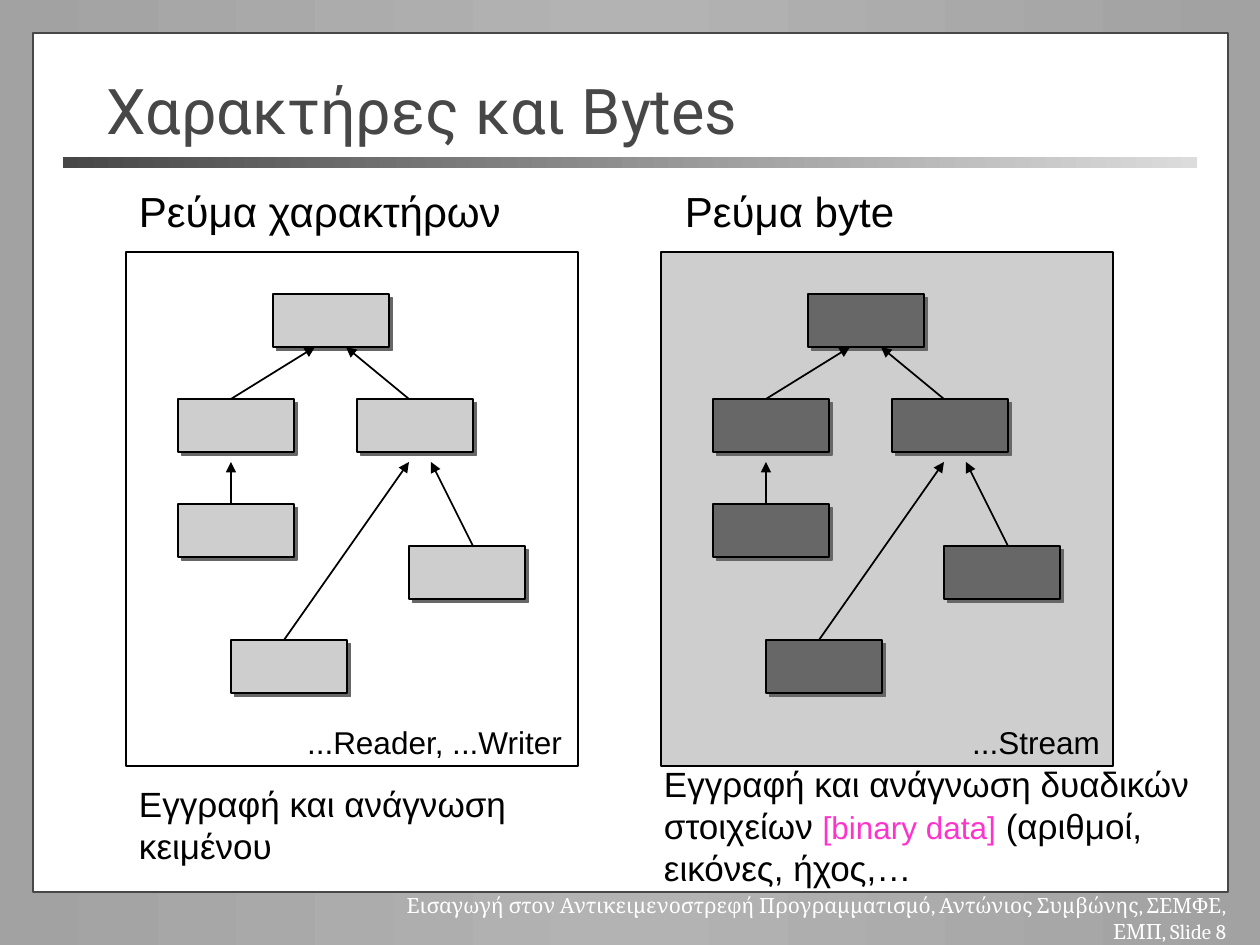
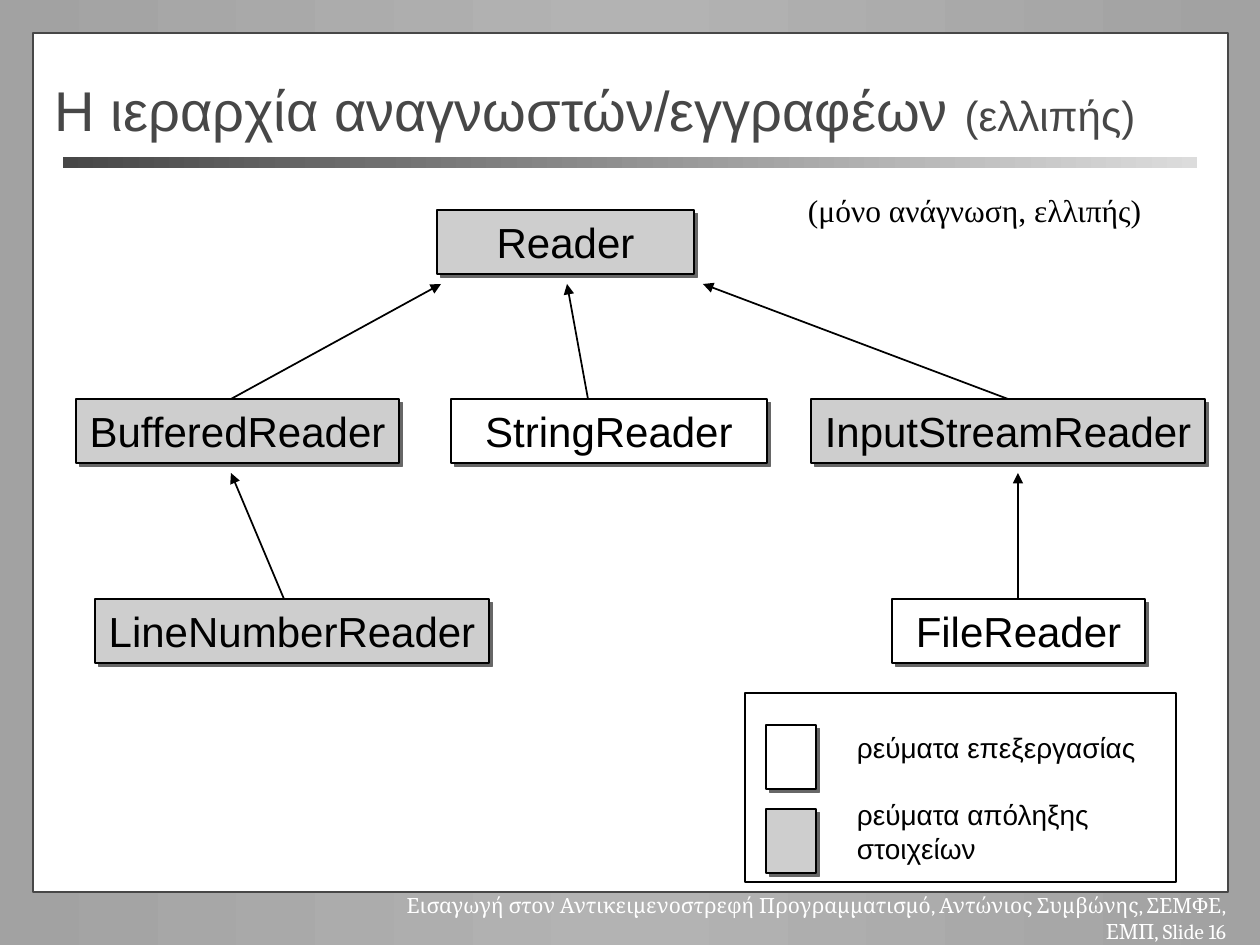
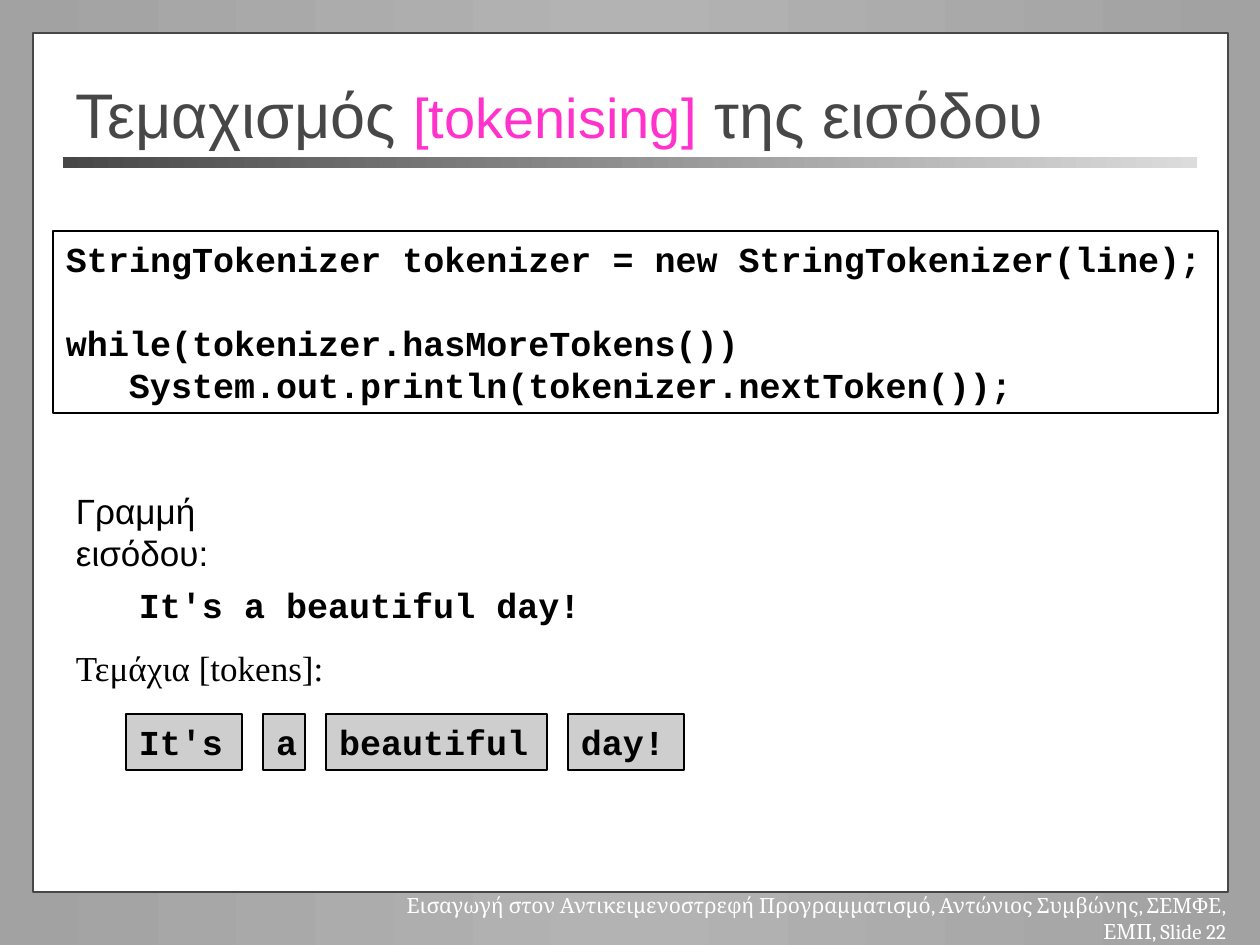
from copy import deepcopy

from lxml.etree import SubElement
from pptx import Presentation
from pptx.dml.color import RGBColor
from pptx.enum.shapes import MSO_CONNECTOR as LINK, MSO_SHAPE as KIND
from pptx.enum.text import MSO_ANCHOR as ANCHOR, PP_ALIGN as ALIGN
from pptx.oxml.ns import qn
from pptx.util import Pt

SCALE = 914400 / 126
PAD = 13
COLORS = {
    "ink": "000000", "paper": "FFFFFF", "slate": "474747", "gray": "CECECE",
    "dark": "676767", "pink": "FF33CC", "edge": "A2A2A2", "mid": "B3B3B3",
    "pale": "DCDCDC",
}
FOOTER = ("Εισαγωγή στον Αντικειμενοστρεφή Προγραμματισμό, "
          "Αντώνιος Συμβώνης, ΣΕΜΦΕ, ΕΜΠ, Slide {}")

NODE = (116, 53)
NODES = [(147, 42), (231, 147), (52, 147), (52, 252), (105, 388), (283, 294)]
EDGES = [
    (105, 147, 189, 95), (283, 147, 220, 95), (105, 252, 105, 210),
    (347, 294, 305, 210), (158, 388, 283, 210),
]


def px(*vals):
    return [round(v * SCALE) for v in vals]


def rgb(name):
    return RGBColor.from_string(COLORS[name])


def style(font, face, size, color, bold=False):
    font.name, font.size, font.bold = face, Pt(size), bold
    font.color.rgb = rgb(color)


def blend(fill, first, last):
    fill.gradient()
    fill.gradient_angle = 0
    for stop, color in zip(fill.gradient_stops, (first, last)):
        stop.color.rgb = rgb(color)


def backdrop(master):
    """Grey gradient, lighter in the middle, behind every slide."""
    fill = master.background.fill
    blend(fill, "edge", "edge")
    first = next(master.element.iter(qn("a:gs")))
    first.addnext(deepcopy(first))
    middle = fill.gradient_stops[1]
    middle.position = 0.5
    middle.color.rgb = rgb("mid")


def write(shape, lines, size, face="Arial", color="ink", bold=False,
          align=ALIGN.LEFT, anchor=ANCHOR.MIDDLE, side=PAD):
    """Fill a shape with lines; a line is a string or (text, size, color) runs."""
    frame = shape.text_frame
    frame.word_wrap = True
    frame.vertical_anchor = anchor
    frame.margin_left = frame.margin_right = px(side)[0]
    frame.margin_top = frame.margin_bottom = px(6)[0]
    for i, line in enumerate(lines):
        para = frame.paragraphs[0] if i == 0 else frame.add_paragraph()
        para.alignment = align
        if isinstance(line, str):
            para.add_run().text = line
            style(para.font, face, size, color, bold)
            continue
        for words, points, tint in line:
            run = para.add_run()
            run.text = words
            style(run.font, face, points, tint, bold)
    return frame


def text(slide, area, line, size, **look):
    write(slide.shapes.add_textbox(*px(*area)), [line], size, **look)


def box(slide, area, fill=None, line="ink", shade=False):
    shape = slide.shapes.add_shape(KIND.RECTANGLE, *px(*area))
    shape.shadow.inherit = False
    if fill:
        shape.fill.solid()
        shape.fill.fore_color.rgb = rgb(fill)
    else:
        shape.fill.background()
    if line:
        shape.line.color.rgb = rgb(line)
        shape.line.width = Pt(1)
    else:
        shape.line.fill.background()
    if shade:
        effects = shape.element.spPr.find(qn("a:effectLst"))
        drop = SubElement(effects, qn("a:outerShdw"), dist=str(Pt(2.8)),
                          dir="2700000", algn="ctr", rotWithShape="0")
        SubElement(drop, qn("a:srgbClr"), val=COLORS["dark"])
    return shape


def arrow(slide, *ends):
    link = slide.shapes.add_connector(LINK.STRAIGHT, *px(*ends))
    link.line.color.rgb = rgb("ink")
    link.line.width = Pt(1)
    SubElement(link.line._get_or_add_ln(), qn("a:tailEnd"), type="triangle")
    SubElement(link.element.spPr, qn("a:effectLst"))


def page(deck, number, area, title, size, face="Arial"):
    """Add a slide with the shared panel, bar, footer and title."""
    slide = deck.slides.add_slide(deck.slide_layouts[6])
    box(slide, (33, 33, 1195, 859), "paper", "slate")
    bar = box(slide, (63, 157, 1134, 11), line=None)
    blend(bar.fill, "slate", "pale")
    text(slide, (365, 887, 874, 38), FOOTER.format(number), 12, face="Cambria",
         color="paper", align=ALIGN.RIGHT, anchor=ANCHOR.TOP)
    text(slide, area, title, size, face=face, color="slate")
    return slide


def tree(slide, left, top, back, fill):
    box(slide, (left, top, 452, 514), back)
    for x, y in NODES:
        box(slide, (left + x, top + y, *NODE), fill, shade=True)
    for x1, y1, x2, y2 in EDGES:
        arrow(slide, left + x1, top + y1, left + x2, top + y2)


def streams(deck):
    slide = page(deck, 8, (94, 70, 1071, 78), "Χαρακτήρες και Bytes", 36, "Roboto")
    tree(slide, 126, 252, None, "gray")
    tree(slide, 661, 252, "gray", "dark")
    text(slide, (126, 179, 420, 63), "Ρεύμα χαρακτήρων", 24)
    text(slide, (672, 179, 300, 63), "Ρεύμα byte", 24)
    text(slide, (126, 776, 472, 96), "Εγγραφή και ανάγνωση κειμένου", 20)
    text(slide, (651, 756, 567, 139), [
        ("Εγγραφή και ανάγνωση δυαδικών στοιχείων ", 20, "ink"),
        ("[binary data]", 18, "pink"),
        (" (αριθμοί, εικόνες, ήχος,…", 20, "ink"),
    ], 20)
    text(slide, (276, 717, 299, 50), "...Reader, ...Writer", 18, align=ALIGN.RIGHT)
    text(slide, (940, 717, 173, 50), "...Stream", 18, align=ALIGN.RIGHT)


def readers(deck):
    slide = page(deck, 16, (42, 70, 1144, 78), [
        ("Η ιεραρχία αναγνωστών/εγγραφέων ", 32, "slate"),
        ("(ελλιπής)", 24, "slate"),
    ], 32)
    for name, x, y, wide, fill in [
        ("Reader", 437, 210, 257, "gray"),
        ("StringReader", 451, 399, 316, "paper"),
        ("BufferedReader", 76, 399, 323, "gray"),
        ("LineNumberReader", 95, 599, 394, "gray"),
        ("FileReader", 892, 599, 253, "paper"),
        ("InputStreamReader", 811, 399, 394, "gray"),
    ]:
        shape = box(slide, (x, y, wide, 64), fill, shade=True)
        write(shape, [name], 24, align=ALIGN.CENTER, side=0)
    for ends in [
        (231, 399, 441, 284), (588, 399, 567, 284), (284, 599, 231, 473),
        (1008, 399, 703, 284), (1018, 599, 1018, 473),
    ]:
        arrow(slide, *ends)
    text(slide, (795, 185, 410, 50), "(μόνο ανάγνωση, ελλιπής)", 18,
         face="Times New Roman")
    box(slide, (766, 809, 50, 64), "gray", shade=True)
    box(slide, (766, 725, 50, 64), "paper", shade=True)
    text(slide, (844, 792, 284, 79), "ρεύματα απόληξης στοιχείων", 16)
    text(slide, (844, 725, 325, 45), "ρεύματα επεξεργασίας", 16)
    box(slide, (745, 693, 431, 189))


def tokens(deck):
    slide = page(deck, 22, (63, 74, 1071, 78), [
        ("Τεμαχισμός ", 36, "slate"),
        ("[tokenising]", 32, "pink"),
        (" της εισόδου", 36, "slate"),
    ], 36)
    code = {"face": "Courier New", "bold": True, "anchor": ANCHOR.TOP}
    frame = write(box(slide, (53, 231, 1165, 182)), [
        "StringTokenizer tokenizer = new StringTokenizer(line);",
        "while(tokenizer.hasMoreTokens())",
        "System.out.println(tokenizer.nextToken());",
    ], 20, **code)
    loop, body = frame.paragraphs[1:]
    loop.space_before = Pt(24)
    body._p.get_or_add_pPr().set("marL", str(Pt(36)))
    text(slide, (126, 577, 892, 54), "It's a beautiful day!", 20, **code)
    x = 126
    for word, wide in [("It's", 116), ("a", 42), ("beautiful", 221), ("day!", 116)]:
        shape = box(slide, (x, 714, wide, 56), "gray")
        write(shape, [word], 20, **code).margin_right = 0
        x += wide + 21
    text(slide, (63, 483, 200, 97), "Γραμμή εισόδου:", 20)
    text(slide, (63, 640, 340, 54), "Τεμάχια [tokens]:", 20, face="Times New Roman")


def main():
    deck = Presentation()
    deck.slide_width, deck.slide_height = px(1260, 945)
    backdrop(deck.slide_master)
    streams(deck)
    readers(deck)
    tokens(deck)
    deck.save("out.pptx")


if __name__ == "__main__":
    main()
